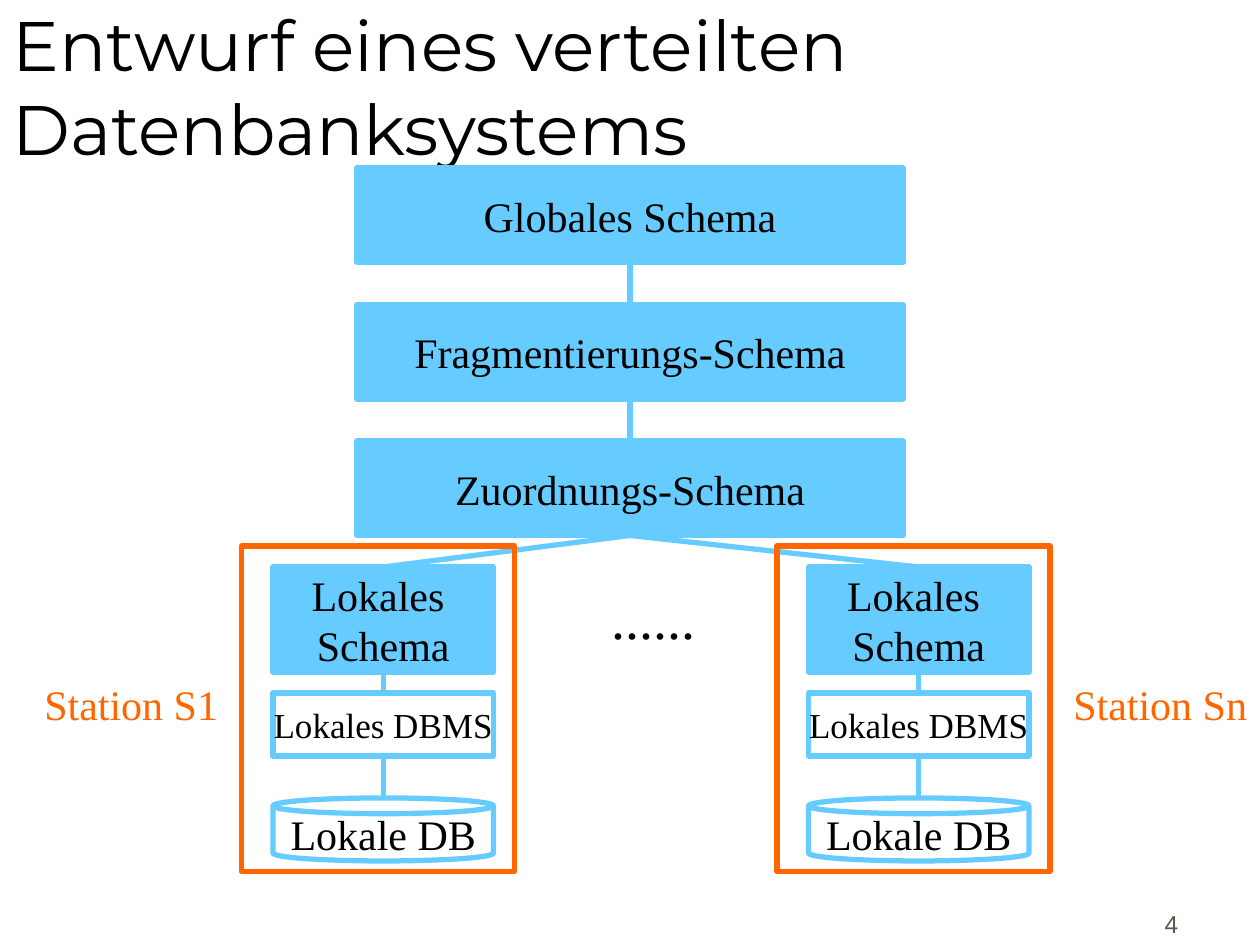
import dataclasses
import pptx
import pptx.dml.color
import pptx.enum.shapes
import pptx.enum.text
import pptx.oxml
import pptx.util
from pptx.oxml import ns

SCALE = 7620
KIND = pptx.enum.shapes.MSO_SHAPE
ALIGN = pptx.enum.text.PP_ALIGN
ANCHOR = pptx.enum.text.MSO_ANCHOR


@dataclasses.dataclass(frozen=True)
class Theme:
    """Colours, fonts and type sizes of the slide."""
    blue: str = "66CCFF"
    orange: str = "FF6600"
    black: str = "000000"
    grey: str = "5E574E"
    serif: str = "Times New Roman"
    head: str = "Montserrat"
    sans: str = "Arial"
    title: int = 40
    dots: int = 32
    body: int = 24
    small: int = 20
    page: int = 14
    line: int = 3


THEME = Theme()


def px(*nums):
    """Turn px lengths into EMU."""
    return [num * SCALE for num in nums]


def rgb(code):
    """Give the colour for a hex code."""
    return pptx.dml.color.RGBColor.from_string(code)


def write(shape, text, size=THEME.body, color=THEME.black, font=THEME.serif,
          align=ALIGN.CENTER, anchor=ANCHOR.MIDDLE, wrap=False):
    """Set and format the text of a shape."""
    frame = shape.text_frame
    frame.text = text
    frame.word_wrap = wrap
    frame.vertical_anchor = anchor
    for para in frame.paragraphs:
        para.alignment = align
        for run in para.runs:
            run.font.size = pptx.util.Pt(size)
            run.font.name = font
            run.font.color.rgb = rgb(color)


def label(slide, box, text, **style):
    """Add a text box."""
    shape = slide.shapes.add_textbox(*px(*box))
    write(shape, text, **style)
    return shape


def block(slide, box, text="", kind=KIND.RECTANGLE, fill=None,
          line=THEME.blue, size=THEME.body):
    """Add an outlined shape with centred text."""
    shape = slide.shapes.add_shape(kind, *px(*box))
    shape.shadow.inherit = False
    if fill:
        shape.fill.solid()
        shape.fill.fore_color.rgb = rgb(fill)
    else:
        shape.fill.background()
    shape.line.color.rgb = rgb(line)
    shape.line.width = pptx.util.Pt(THEME.line)
    if text:
        write(shape, text, size)
    return shape


def link(slide, upper, lower):
    """Join the bottom of one shape to the top of the next."""
    start = upper.left + upper.width // 2, upper.top + upper.height
    end = lower.left + lower.width // 2, lower.top
    line = slide.shapes.add_connector(
        pptx.enum.shapes.MSO_CONNECTOR.STRAIGHT, *start, *end)
    line.begin_connect(upper, 2)
    if lower.auto_shape_type == KIND.RECTANGLE:
        line.end_connect(lower, 0)
    line.line.color.rgb = rgb(THEME.blue)
    line.line.width = pptx.util.Pt(THEME.line)
    line._element.spPr.append(pptx.oxml.parse_xml(
        "<a:effectLst %s/>" % ns.nsdecls("a")))


def global_stack(slide, box):
    """Build the chain of global schemas and return the last one."""
    left, top, width, height = box
    names = ["Globales Schema", "Fragmentierungs-Schema", "Zuordnungs-Schema"]
    tall = 90
    step = (height - tall) // (len(names) - 1)
    blocks = [block(slide, (left, top + i * step, width, tall), name,
                    fill=THEME.blue) for i, name in enumerate(names)]
    for upper, lower in zip(blocks, blocks[1:]):
        link(slide, upper, lower)
    return blocks[-1]


def station(slide, box, root):
    """Build one framed station below the root schema."""
    left, top, width, height = box
    left, wide = left + 30, width - 50
    schema = block(slide, (left, top + 20, wide, 100), "Lokales \nSchema",
                   fill=THEME.blue)
    dbms = block(slide, (left, top + 140, wide, 60), "Lokales DBMS",
                 size=THEME.small)
    store = block(slide, (left, top + 240, wide, 60), "Lokale DB",
                  kind=KIND.CAN)
    for upper, lower in ((root, schema), (schema, dbms), (dbms, store)):
        link(slide, upper, lower)
    block(slide, box, line=THEME.orange)


def main():
    """Build the slide and save it."""
    deck = pptx.Presentation()
    deck.slide_width, deck.slide_height = px(1200, 900)
    slide = deck.slides.add_slide(deck.slide_layouts[6])
    page = label(slide, (1016, 840, 118, 60), "4", size=THEME.page,
                 color=THEME.grey, font=THEME.sans, align=ALIGN.RIGHT,
                 anchor=ANCHOR.BOTTOM, wrap=True)
    page.text_frame.paragraphs[0].space_before = pptx.util.Pt(7)
    label(slide, (0, 0, 1200, 167),
          "Entwurf eines verteilten Datenbanksystems", size=THEME.title,
          font=THEME.head, align=ALIGN.LEFT, anchor=ANCHOR.BOTTOM, wrap=True)
    root = global_stack(slide, (340, 160, 520, 350))
    label(slide, (570, 550, 104, 75), "......", size=THEME.dots)
    for left, side, name in ((230, 30, "Station S1"),
                             (740, 1010, "Station Sn")):
        station(slide, (left, 520, 260, 310), root)
        label(slide, (side, 640, 190, 60), name, color=THEME.orange)
    deck.save("out.pptx")


if __name__ == "__main__":
    main()
